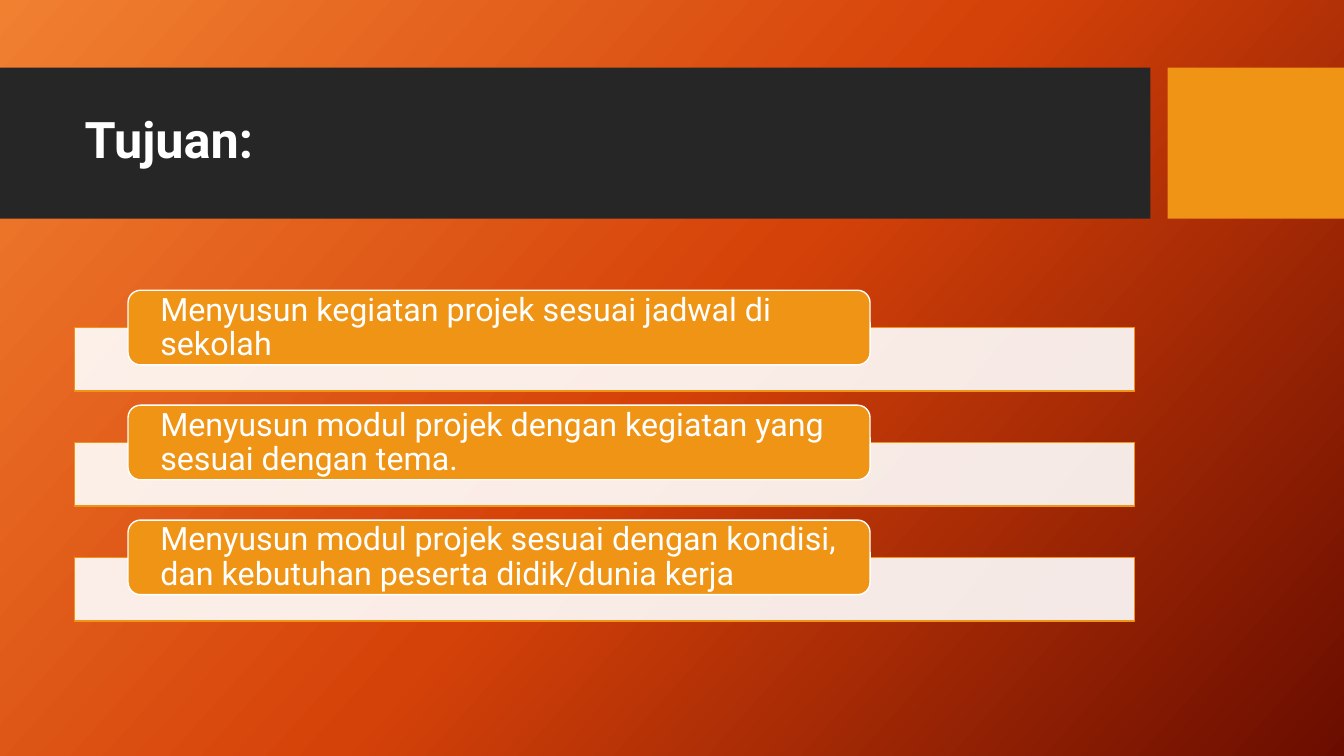
import copy
from dataclasses import dataclass

import lxml.etree
import pptx
import pptx.dml.color
import pptx.enum.shapes
import pptx.enum.text
import pptx.oxml.ns
import pptx.shapes.autoshape
import pptx.slide
import pptx.util

Inches = pptx.util.Inches
KIND = pptx.enum.shapes.MSO_SHAPE
FONT = "Roboto"
HUES = {
    "dark": "262626",
    "gold": "F09415",
    "white": "FFFFFF",
    "start": "F18031",
    "mid": "D54209",
    "end": "6A0D00",
}
FADE = [(0, "start"), (0.5, "mid"), (1, "end")]
GOALS = [
    "Menyusun kegiatan projek sesuai jadwal di sekolah",
    "Menyusun modul projek dengan kegiatan yang sesuai dengan tema.",
    "Menyusun modul projek sesuai dengan kondisi, dan kebutuhan peserta didik/dunia kerja",
]
PITCH = 1.14


@dataclass
class Box:
    left: float
    top: float
    width: float
    height: float

    def down(self, step: float) -> "Box":
        return Box(self.left, self.top + step, self.width, self.height)

    def place(self) -> list[int]:
        return [Inches(n) for n in (self.left, self.top, self.width, self.height)]


@dataclass
class Block:
    box: Box
    fill: str
    line: str = ""
    kind: int = KIND.RECTANGLE
    alpha: int = 100


@dataclass
class Label:
    box: Box
    text: str
    size: int
    inset: float
    rim: float = 0
    bold: bool = False


def hue(name: str) -> pptx.dml.color.RGBColor:
    return pptx.dml.color.RGBColor.from_string(HUES[name])


def paint_back(slide: pptx.slide.Slide) -> None:
    fill = slide.background.fill
    fill.gradient()
    fill.gradient_angle = 318
    stops = slide.element.xpath(".//a:gsLst")[0]
    stops.insert(1, copy.deepcopy(stops[0]))
    for stop, (spot, name) in zip(fill.gradient_stops, FADE):
        stop.position = spot
        stop.color.rgb = hue(name)


def draw_block(slide: pptx.slide.Slide, block: Block) -> None:
    shape = slide.shapes.add_shape(block.kind, *block.box.place())
    shape.shadow.inherit = False
    shape.fill.solid()
    shape.fill.fore_color.rgb = hue(block.fill)
    if block.alpha < 100:
        tint = shape.element.xpath("./p:spPr/a:solidFill/a:srgbClr")[0]
        alpha = lxml.etree.SubElement(tint, pptx.oxml.ns.qn("a:alpha"))
        alpha.set("val", str(block.alpha * 1000))
    if block.line:
        shape.line.color.rgb = hue(block.line)
        shape.line.width = pptx.util.Pt(1)
    else:
        shape.line.fill.background()


def draw_label(slide: pptx.slide.Slide, label: Label) -> None:
    frame = slide.shapes.add_textbox(*label.box.place()).text_frame
    frame.word_wrap = True
    frame.vertical_anchor = pptx.enum.text.MSO_ANCHOR.MIDDLE
    frame.margin_left = frame.margin_right = Inches(label.inset)
    frame.margin_top = frame.margin_bottom = Inches(label.rim)
    line = frame.paragraphs[0]
    line.line_spacing = 0.9
    run = line.add_run()
    run.text = label.text
    run.font.name = FONT
    run.font.size = pptx.util.Pt(label.size)
    run.font.bold = label.bold
    run.font.color.rgb = hue("white")


def main() -> None:
    deck = pptx.Presentation()
    deck.slide_width = Inches(13.33)
    deck.slide_height = Inches(7.5)
    slide = deck.slides.add_slide(deck.slide_layouts[6])
    paint_back(slide)

    draw_block(slide, Block(Box(0, 0.67, 11.41, 1.5), "dark"))
    draw_block(slide, Block(Box(11.58, 0.67, 1.75, 1.5), "gold"))
    draw_label(slide, Label(Box(0.74, 0.82, 10.51, 1.18), "Tujuan:", 36, 0.1, 0.05, True))

    bar = Box(0.74, 3.25, 10.51, 0.63)
    pill = Box(1.27, 2.88, 7.36, 0.74)
    words = Box(1.31, 2.92, 7.29, 0.67)
    for row, goal in enumerate(GOALS):
        step = row * PITCH
        draw_block(slide, Block(bar.down(step), "white", "gold", alpha=90))
        draw_block(slide, Block(pill.down(step), "gold", "white", KIND.ROUNDED_RECTANGLE))
        draw_label(slide, Label(words.down(step), goal, 23, 0.28))

    deck.save("out.pptx")


if __name__ == "__main__":
    main()
